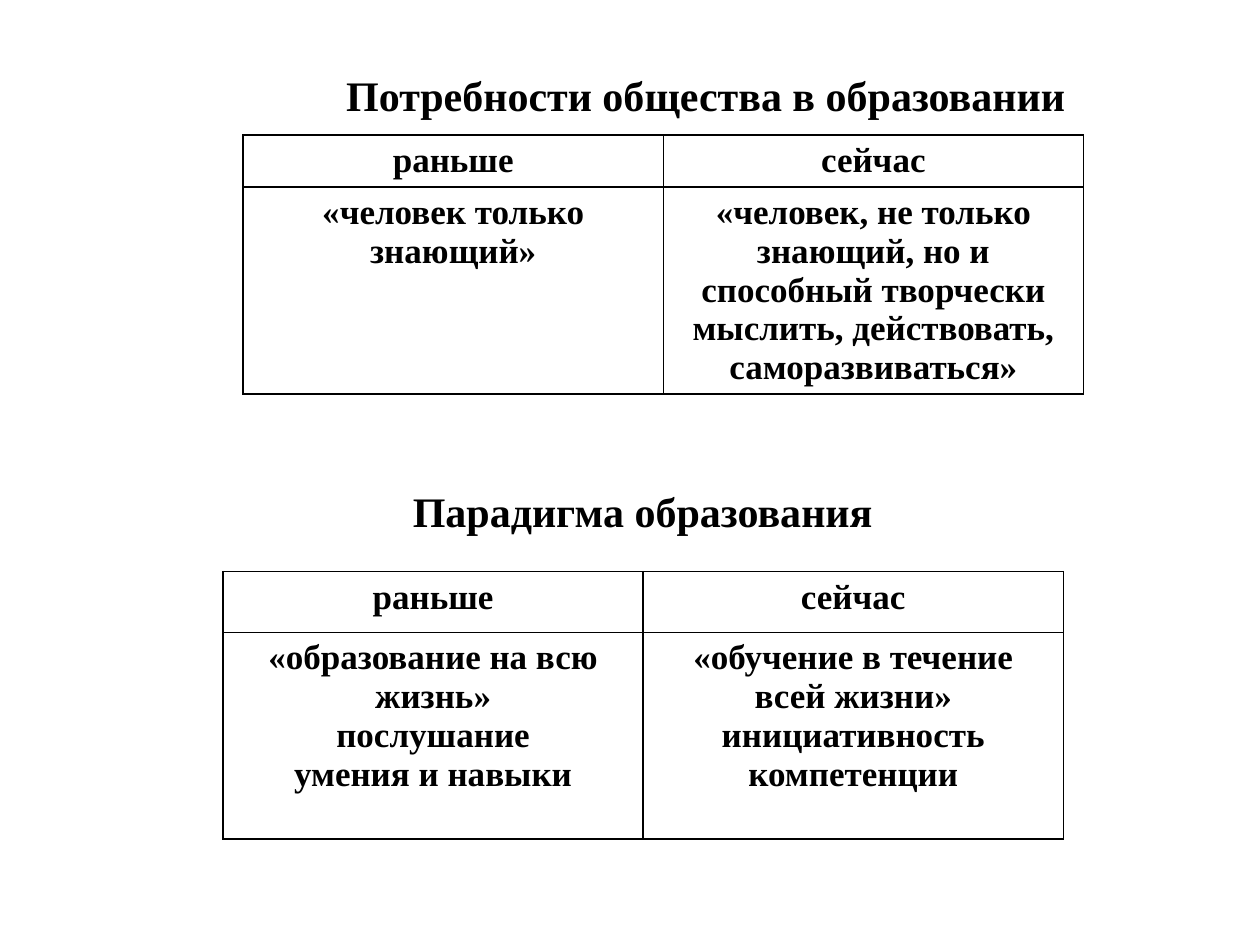
from lxml.etree import SubElement
from pptx import Presentation
from pptx.dml.color import RGBColor
from pptx.enum.text import MSO_ANCHOR, PP_ALIGN
from pptx.oxml.ns import qn
from pptx.util import Inches, Pt

WIDE, HIGH = Inches(10), Inches(7.5)
FONT, INK = "Times New Roman", "000000"
HEAD = ["раньше", "сейчас"]
NEEDS = [["«человек только знающий»"],
         ["«человек, не только знающий, но и способный творчески "
          "мыслить, действовать, саморазвиваться»"]]
MODEL = [["«образование на всю жизнь»", "послушание", "умения и навыки"],
         ["«обучение в течение всей жизни» инициативность", "компетенции"]]


def paint(target, code):
    """Give a fill or font colour its hex value."""
    target.rgb = RGBColor.from_string(code)


def write(frame, lines, size):
    """Write centred bold lines into a text frame."""
    frame.word_wrap = True
    for index, line in enumerate(lines):
        para = frame.add_paragraph() if index else frame.paragraphs[0]
        para.alignment = PP_ALIGN.CENTER
        run = para.add_run()
        run.text = line
        run.font.name, run.font.size, run.font.bold = FONT, Pt(size), True
        paint(run.font.color, INK)


def edge(cell):
    """Draw a thin line on all four sides of a cell."""
    props = cell._tc.get_or_add_tcPr()
    for side in ("lnL", "lnR", "lnT", "lnB"):
        line = SubElement(props, qn(f"a:{side}"), w=str(Pt(1)))
        fill = SubElement(line, qn("a:solidFill"))
        SubElement(fill, qn("a:srgbClr"), val=INK)


def heading(shape, text, box):
    """Place a heading in its box and write it."""
    shape.left, shape.top, shape.width, shape.height = box
    shape.text_frame.vertical_anchor = MSO_ANCHOR.MIDDLE
    write(shape.text_frame, [text], 24)


def compare(slide, body, box, share):
    """Build a two-column table whose header takes a share of the box."""
    left, top, width, height = box
    table = slide.shapes.add_table(2, 2, left, top, width, height).table
    table.first_row = table.horz_banding = False
    table.rows[0].height = int(height * share)
    table.rows[1].height = height - table.rows[0].height
    for row, texts in enumerate([[[word] for word in HEAD], body]):
        for col, lines in enumerate(texts):
            cell = table.cell(row, col)
            edge(cell)
            cell.fill.background()
            write(cell.text_frame, lines, 20)


def area(left, top, width, height):
    """Turn shares of the slide into lengths."""
    return (int(WIDE * left), int(HIGH * top),
            int(WIDE * width), int(HIGH * height))


def main():
    """Build the slide and save it."""
    deck = Presentation()
    deck.slide_width, deck.slide_height = WIDE, HIGH
    slide = deck.slides.add_slide(deck.slide_layouts[5])
    heading(slide.shapes.title, "Потребности общества в образовании",
            area(0.16, 0.06, 0.8, 0.08))
    compare(slide, NEEDS, area(0.193, 0.143, 0.667, 0.274), 0.2)
    box = area(0.11, 0.5, 0.8, 0.08)
    heading(slide.shapes.add_textbox(*box), "Парадигма образования", box)
    compare(slide, MODEL, area(0.177, 0.605, 0.667, 0.283), 0.227)
    deck.save("out.pptx")


if __name__ == "__main__":
    main()
